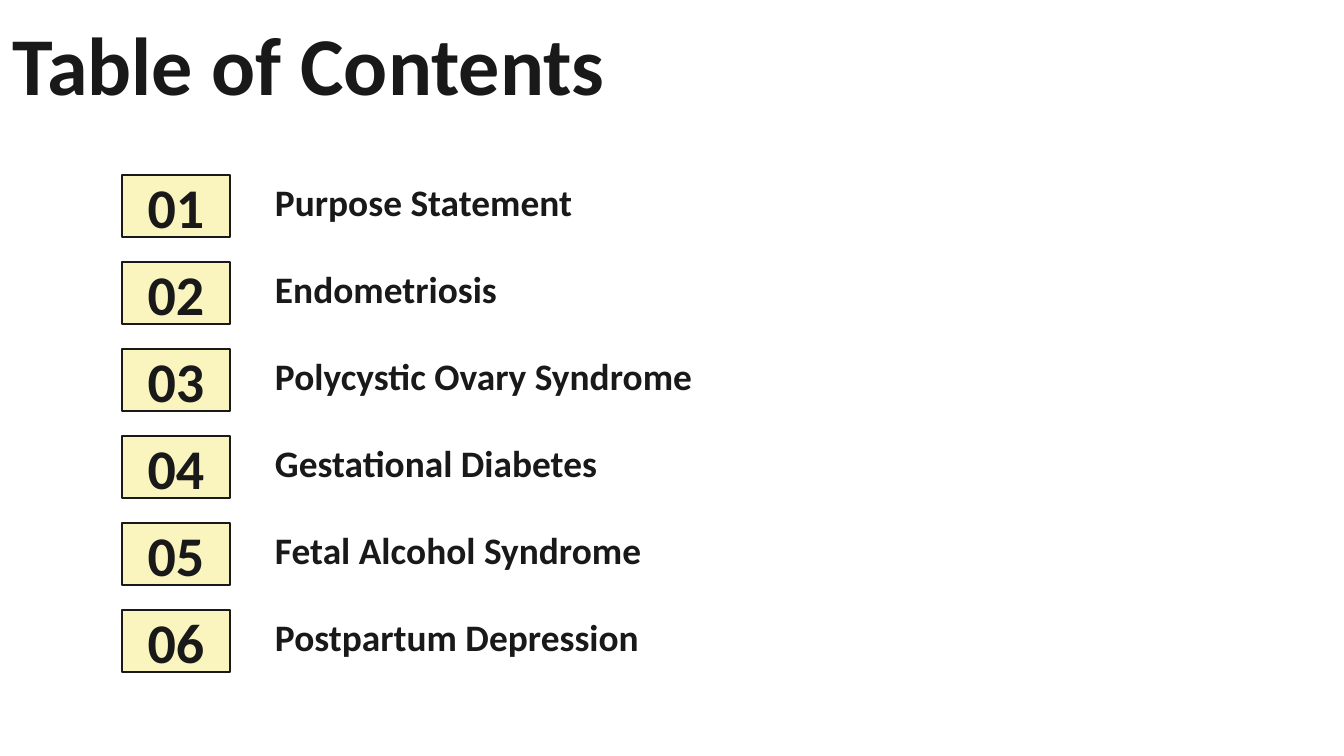
from pptx import Presentation
from pptx.dml.color import RGBColor
from pptx.enum.shapes import MSO_SHAPE
from pptx.enum.text import MSO_ANCHOR, PP_ALIGN
from pptx.util import Emu, Pt

RECTANGLE = MSO_SHAPE.RECTANGLE
TOP, MIDDLE, BOTTOM = MSO_ANCHOR.TOP, MSO_ANCHOR.MIDDLE, MSO_ANCHOR.BOTTOM
LEFT, CENTER = PP_ALIGN.LEFT, PP_ALIGN.CENTER

SLIDE_WIDTH, SLIDE_HEIGHT = 1344, 756
EMU_PER_PX = 9144000 / SLIDE_WIDTH

TOPICS = [
    "Purpose Statement",
    "Endometriosis",
    "Polycystic Ovary Syndrome",
    "Gestational Diabetes",
    "Fetal Alcohol Syndrome",
    "Postpartum Depression",
]
FIRST_ROW_TOP, ROW_STEP, ROW_HEIGHT = 175, 87, 62


def px(length):
    return Emu(round(length * EMU_PER_PX))


def color(hex_value):
    return RGBColor.from_string(hex_value)


def set_text(shape, text, *, font, ink, inset, size, align=LEFT, anchor=TOP):
    frame = shape.text_frame
    frame.word_wrap = True
    frame.vertical_anchor = anchor
    frame.margin_left = frame.margin_right = px(inset)
    frame.margin_top = frame.margin_bottom = px(inset)
    paragraph = frame.paragraphs[0]
    paragraph.alignment = align
    run = paragraph.add_run()
    run.text = text
    run.font.name = font
    run.font.size = Pt(size)
    run.font.bold = True
    run.font.color.rgb = color(ink)


class ContentsSlide:
    ink = "191919"
    badge_fill = "FAF5BF"
    text_style = {"font": "Calibri", "ink": ink, "inset": 13}

    def __init__(self, presentation):
        self.slide = presentation.slides.add_slide(presentation.slide_layouts[6])
        background = self.slide.background.fill
        background.solid()
        background.fore_color.rgb = color("FFFFFF")

    def label(self, left, top, width, height, text, **style):
        box = self.slide.shapes.add_textbox(px(left), px(top), px(width), px(height))
        set_text(box, text, **self.text_style, **style)

    def badge(self, left, top, width, height, text, **style):
        shape = self.slide.shapes.add_shape(
            RECTANGLE, px(left), px(top), px(width), px(height))
        shape.shadow.inherit = False
        shape.fill.solid()
        shape.fill.fore_color.rgb = color(self.badge_fill)
        shape.line.color.rgb = color(self.ink)
        shape.line.width = Pt(0.75)
        set_text(shape, text, **self.text_style, **style)


def main():
    presentation = Presentation()
    presentation.slide_width = px(SLIDE_WIDTH)
    presentation.slide_height = px(SLIDE_HEIGHT)
    contents = ContentsSlide(presentation)

    # Title
    contents.label(0, 0, SLIDE_WIDTH, 112, "Table of Contents", size=44)

    # Numbered topics
    for index, topic in enumerate(TOPICS):
        top = FIRST_ROW_TOP + index * ROW_STEP
        contents.badge(122, top, 108, ROW_HEIGHT, f"{index + 1:02}",
                       size=30, align=CENTER, anchor=MIDDLE)
        contents.label(262, top, 640, ROW_HEIGHT, topic, size=20, anchor=BOTTOM)

    presentation.save("out.pptx")


if __name__ == "__main__":
    main()
